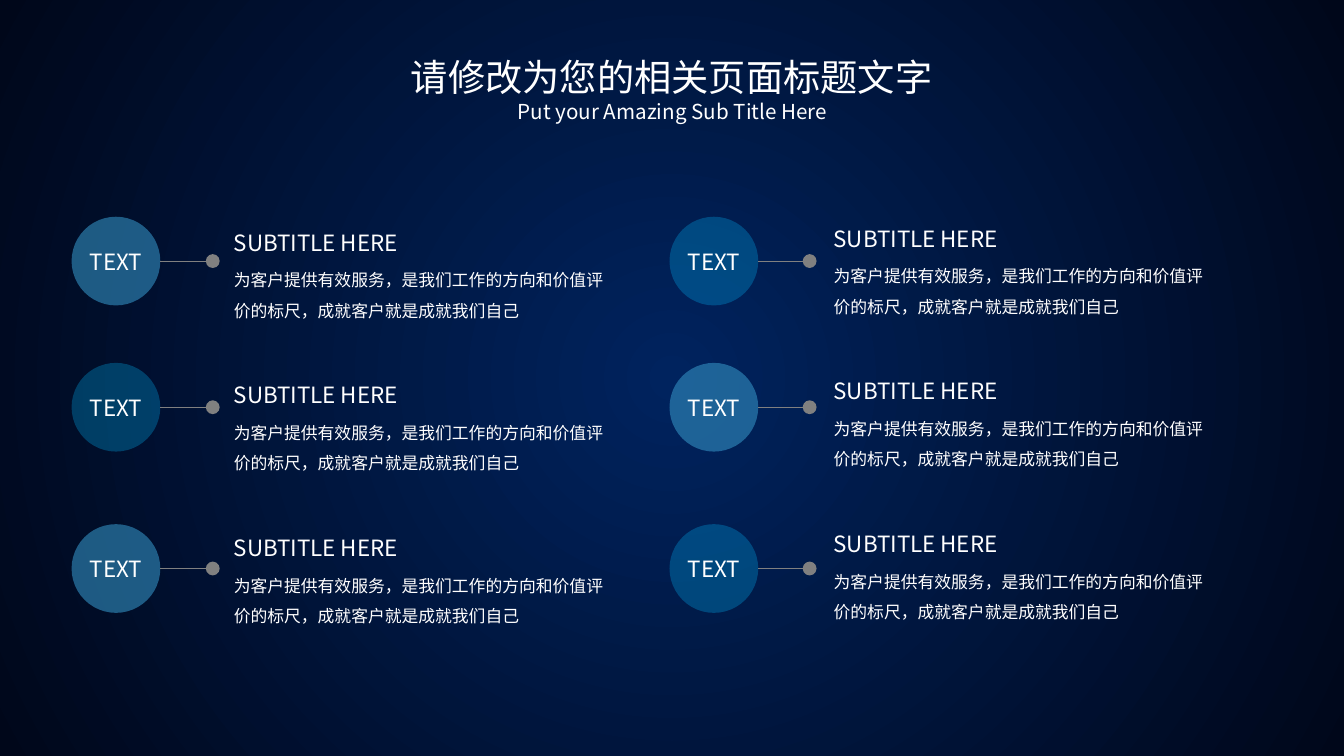
from itertools import product
from lxml.etree import SubElement as Sub
from pptx import Presentation
from pptx.dml.color import RGBColor as Rgb
from pptx.enum.shapes import MSO_CONNECTOR as Conn, MSO_SHAPE as Shape
from pptx.enum.text import MSO_ANCHOR as Anchor, MSO_AUTO_SIZE as Auto, PP_ALIGN as Align
from pptx.oxml.ns import qn
from pptx.util import Inches, Pt

# Content
TITLE = "请修改为您的相关页面标题文字"
TAGLINE = "Put your Amazing Sub Title Here"
BODY = "为客户提供有效服务，是我们工作的方向和价值评价的标尺，成就客户就是成就我们自己"
ITEM = ("TEXT", "SUBTITLE HERE", BODY)
COLS = [[ITEM] * 3, [ITEM] * 3]

THEME = {
    "white": "FFFFFF", "gray": "808080", "glow": "00235E", "edge": "00071A",
    "tints": [("328FC1", 60), ("00AEEF", 30)],
    "font": "Noto Sans CJK SC", "plain": "Arial",
    "title": 26.6, "tag": 14.7, "head": 16, "body": 12,
}

# Layout: per column, circle left, line end, text left, text top
SIDES = [(0.71, 2.11, 2.22, 2.22), (6.64, 8.03, 8.17, 2.18)]
ROWS = [2.15, 3.6, 5.2]
SIZE = 0.88
STEP = 1.515
WIDE = 3.88


def write(frame, text, size, font=THEME["font"], align=None, space=None, after=None):
    par = frame.paragraphs[0]
    par.alignment = align
    par.line_spacing = space
    if after:
        par.space_after = Pt(after)
    run = par.add_run()
    run.text = text
    run.font.size = Pt(size)
    run.font.name = font
    run.font.color.rgb = Rgb.from_string(THEME["white"])
    Sub(run.font._element, qn("a:ea"), typeface=THEME["font"])


def add_text(shapes, box, text, size, inset=True, **form):
    frame = shapes.add_textbox(*map(Inches, box)).text_frame
    frame.word_wrap = True
    frame.auto_size = Auto.SHAPE_TO_FIT_TEXT
    if not inset:
        frame.margin_left = frame.margin_right = 0
        frame.margin_top = frame.margin_bottom = 0
    write(frame, text, size, **form)


def add_disc(shapes, left, top, text, tint, alpha):
    disc = shapes.add_shape(Shape.OVAL, *map(Inches, (left, top, SIZE, SIZE)))
    disc.shadow.inherit = False
    disc.line.fill.background()
    disc.fill.solid()
    disc.fill.fore_color.rgb = Rgb.from_string(tint)
    color = disc.element.spPr.find(".//" + qn("a:srgbClr"))
    Sub(color, qn("a:alpha"), val=str(alpha * 1000))
    frame = disc.text_frame
    frame.word_wrap = False
    frame.vertical_anchor = Anchor.MIDDLE
    write(frame, text, THEME["head"], align=Align.CENTER)


def add_pin(shapes, start, end, mid):
    pin = shapes.add_connector(Conn.STRAIGHT, *map(Inches, (start, mid, end, mid)))
    pin.line.width = Pt(0.5)
    pin.line.color.rgb = Rgb.from_string(THEME["gray"])
    Sub(pin.line._get_or_add_ln(), qn("a:tailEnd"), type="oval", w="lg", len="lg")
    Sub(pin.element.spPr, qn("a:effectLst"))


def set_back(slide):
    fill = slide.background.fill
    fill.gradient()
    for stop, color in zip(fill.gradient_stops, (THEME["glow"], THEME["edge"])):
        stop.color.rgb = Rgb.from_string(color)
    grad = slide.element.find(".//" + qn("a:gradFill"))
    grad.remove(grad.find(qn("a:lin")))
    ring = Sub(grad, qn("a:path"), {"path": "circle"})
    Sub(ring, qn("a:fillToRect"), dict.fromkeys("ltrb", "50000"))


def main():
    deck = Presentation()
    deck.slide_width, deck.slide_height = Inches(13.33), Inches(7.5)
    slide = deck.slides.add_slide(deck.slide_layouts[6])
    shapes = slide.shapes
    set_back(slide)

    # Heading
    add_text(shapes, (2.73, 0.54, 7.87, 0.45), TITLE, THEME["title"],
             inset=False, align=Align.CENTER)
    add_text(shapes, (3.87, 0.98, 5.6, 0.25), TAGLINE, THEME["tag"],
             inset=False, align=Align.CENTER)

    # Items: disc, pin and text pair, with alternating tints
    for col, row in product(range(len(SIDES)), range(len(ROWS))):
        label, head, body = COLS[col][row]
        left, end, text_x, first = SIDES[col]
        top = ROWS[row]
        add_disc(shapes, left, top, label, *THEME["tints"][(col + row) % 2])
        add_pin(shapes, left + SIZE, end, top + SIZE / 2)
        text_y = first + row * STEP
        pair = shapes.add_group_shape().shapes
        add_text(pair, (text_x, text_y + 0.31, WIDE, 0.71), body, THEME["body"],
                 font=THEME["plain"], space=1.5, after=6)
        add_text(pair, (text_x, text_y, WIDE, 0.37), head, THEME["head"])

    deck.save("out.pptx")


if __name__ == "__main__":
    main()
